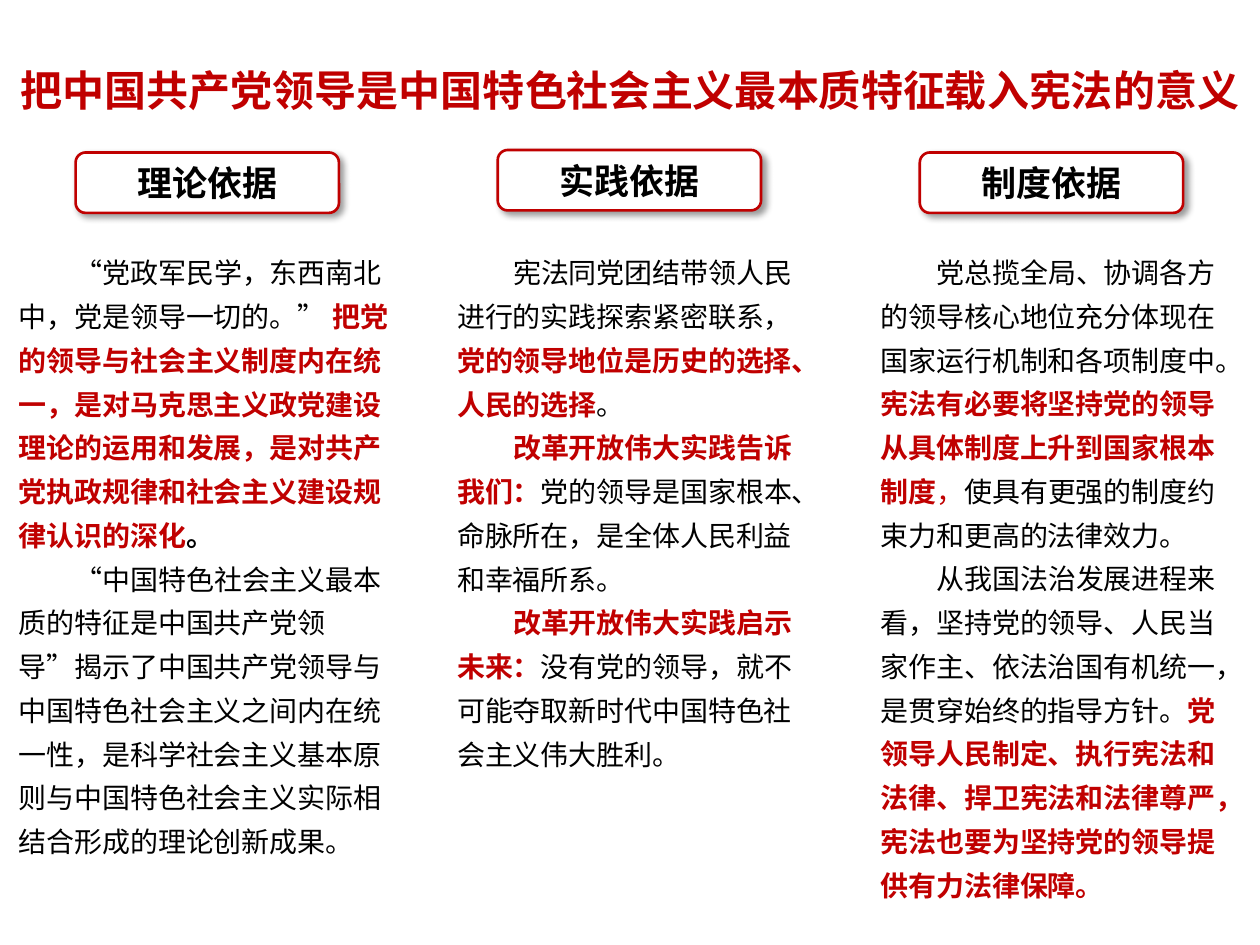
from dataclasses import dataclass

from lxml.etree import SubElement
from pptx import Presentation
from pptx.dml.color import RGBColor
from pptx.enum.lang import MSO_LANGUAGE_ID
from pptx.enum.shapes import MSO_SHAPE
from pptx.enum.text import MSO_ANCHOR, MSO_AUTO_SIZE, PP_ALIGN
from pptx.oxml.ns import qn
from pptx.util import Inches, Pt


@dataclass(frozen=True)
class Theme:
    font: str = "Noto Sans CJK SC"
    red: RGBColor = RGBColor(0xC0, 0x00, 0x00)
    black: RGBColor = RGBColor(0x00, 0x00, 0x00)
    white: RGBColor = RGBColor(0xFF, 0xFF, 0xFF)
    title_size: int = 24
    label_size: int = 20
    body_size: int = 16
    body_leading: int = 25


class SlideBuilder:
    def __init__(self, slide, theme):
        self.slide = slide
        self.theme = theme

    def add_run(self, paragraph, text, size, color, bold):
        run = paragraph.add_run()
        run.text = text
        font = run.font
        font.name = self.theme.font
        font.size = Pt(size)
        font.bold = bold
        font.color.rgb = color
        font.language_id = MSO_LANGUAGE_ID.SIMPLIFIED_CHINESE
        east_asian = SubElement(run._r.get_or_add_rPr(), qn("a:ea"))
        east_asian.set("typeface", self.theme.font)

    def add_title(self, text, left, top, width, height):
        title = self.slide.shapes.title
        title.left, title.top = Inches(left), Inches(top)
        title.width, title.height = Inches(width), Inches(height)
        frame = title.text_frame
        frame.auto_size = MSO_AUTO_SIZE.NONE
        frame.vertical_anchor = MSO_ANCHOR.MIDDLE
        paragraph = frame.paragraphs[0]
        paragraph.alignment = PP_ALIGN.CENTER
        self.add_run(paragraph, text, self.theme.title_size, self.theme.red, True)

    def add_label(self, text, left, top, width, height):
        shape = self.slide.shapes.add_shape(
            MSO_SHAPE.ROUNDED_RECTANGLE,
            Inches(left), Inches(top), Inches(width), Inches(height))
        shape.fill.solid()
        shape.fill.fore_color.rgb = self.theme.white
        shape.line.color.rgb = self.theme.red
        shape.line.width = Pt(1.5)
        self.add_shadow(shape)
        shape.text_frame.vertical_anchor = MSO_ANCHOR.MIDDLE
        paragraph = shape.text_frame.paragraphs[0]
        paragraph.alignment = PP_ALIGN.CENTER
        self.add_run(paragraph, text, self.theme.label_size, self.theme.black, True)

    def add_shadow(self, shape):
        """Give the shape a soft black shadow towards the lower right."""
        shape.shadow.inherit = False
        effects = shape._element.spPr.find(qn("a:effectLst"))
        shadow = SubElement(
            effects, qn("a:outerShdw"), blurRad=str(Pt(4)), dist=str(Pt(3)),
            dir=str(45 * 60000), algn="tl", rotWithShape="0")
        color = SubElement(shadow, qn("a:srgbClr"), val=str(self.theme.black))
        SubElement(color, qn("a:alpha"), val="40000")

    def add_body(self, paragraphs, left, top, width, height):
        """Add indented paragraphs, each a list of (text, color, bold) runs."""
        box = self.slide.shapes.add_textbox(
            Inches(left), Inches(top), Inches(width), Inches(height))
        frame = box.text_frame
        frame.word_wrap = True
        frame.auto_size = MSO_AUTO_SIZE.SHAPE_TO_FIT_TEXT
        for index, runs in enumerate(paragraphs):
            paragraph = frame.paragraphs[0] if index == 0 else frame.add_paragraph()
            paragraph.line_spacing = Pt(self.theme.body_leading)
            two_characters = Pt(2 * self.theme.body_size)
            paragraph._p.get_or_add_pPr().set("indent", str(two_characters))
            for text, color, bold in runs:
                self.add_run(paragraph, text, self.theme.body_size, color, bold)


def main():
    presentation = Presentation()
    presentation.slide_width = Inches(10)
    presentation.slide_height = Inches(7.5)
    theme = Theme()
    slide = presentation.slides.add_slide(presentation.slide_layouts[5])
    builder = SlideBuilder(slide, theme)

    def plain(text):
        return text, theme.black, False

    def strong(text):
        return text, theme.red, True

    theory = [
        [plain("“党政军民学，东西南北中，党是领导一切的。” "),
         strong("把党的领导与社会主义制度内在统一，是对马克思主义政党建设理论的运用和发展，"
                "是对共产党执政规律和社会主义建设规律认识的深化"),
         ("。", theme.black, True)],
        [plain("“中国特色社会主义最本质的特征是中国共产党领导”揭示了中国共产党领导与"
               "中国特色社会主义之间内在统一性，是科学社会主义基本原则与"
               "中国特色社会主义实际相结合形成的理论创新成果。")],
    ]
    practice = [
        [plain("宪法同党团结带领人民进行的实践探索紧密联系，"),
         strong("党的领导地位是历史的选择、人民的选择"),
         plain("。")],
        [strong("改革开放伟大实践告诉我们："),
         plain("党的领导是国家根本、命脉所在，是全体人民利益和幸福所系。")],
        [strong("改革开放伟大实践启示未来："),
         plain("没有党的领导，就不可能夺取新时代中国特色社会主义伟大胜利。")],
    ]
    system = [
        [plain("党总揽全局、协调各方的领导核心地位充分体现在国家运行机制和各项制度中。"),
         strong("宪法有必要将坚持党的领导从具体制度上升到国家根本制度"),
         ("，", theme.red, False),
         plain("使具有更强的制度约束力和更高的法律效力。")],
        [plain("从我国法治发展进程来看，坚持党的领导、人民当家作主、依法治国有机统一，"
               "是贯穿始终的指导方针。"),
         strong("党领导人民制定、执行宪法和法律、捍卫宪法和法律尊严，"
                "宪法也要为坚持党的领导提供有力法律保障。")],
    ]

    builder.add_title("把中国共产党领导是中国特色社会主义最本质特征载入宪法的意义",
                      0, 0.46, 10, 0.5)
    # label, label top, body paragraphs, body left, body width, body height
    columns = [
        ("理论依据", 1.21, theory, 0.05, 3.19, 5.01),
        ("实践依据", 1.19, practice, 3.53, 3.07, 4.31),
        ("制度依据", 1.21, system, 6.89, 2.91, 5.36),
    ]
    for index, (label, label_top, body, left, width, height) in enumerate(columns):
        builder.add_label(label, 0.6 + index * 3.35, label_top, 2.09, 0.48)
        builder.add_body(body, left, 1.9, width, height)

    presentation.save("out.pptx")


if __name__ == "__main__":
    main()
